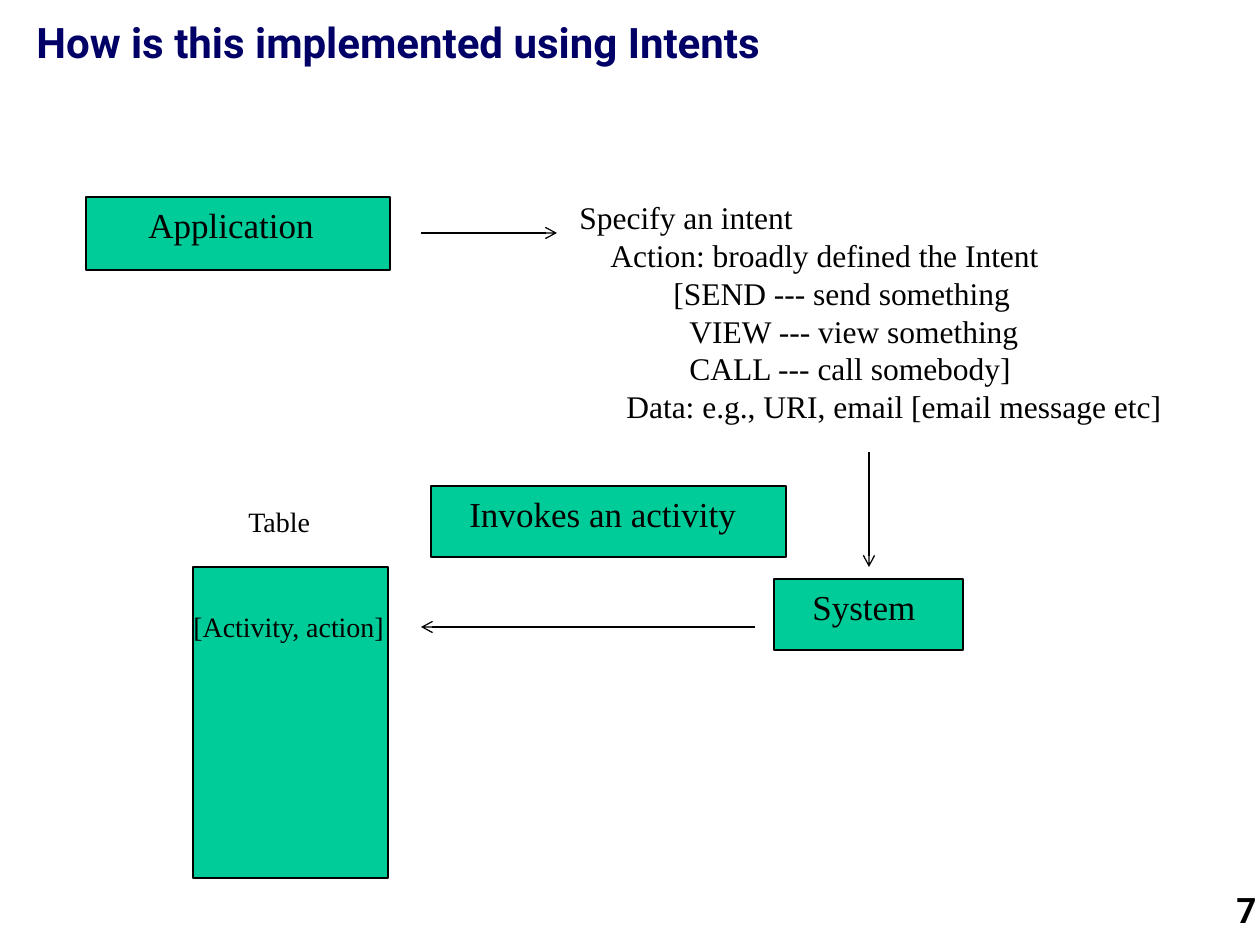
import lxml.etree
import pptx
import pptx.dml.color
import pptx.enum.shapes
import pptx.enum.text
import pptx.oxml.ns
import pptx.util

PX_PER_INCH = 126
NAVY = pptx.dml.color.RGBColor(0x00, 0x00, 0x66)
BLACK = pptx.dml.color.RGBColor(0x00, 0x00, 0x00)
GREEN = pptx.dml.color.RGBColor(0x00, 0xCC, 0x99)
SERIF = "Times New Roman"
SANS = "Roboto"
LEFT = pptx.enum.text.PP_ALIGN.LEFT
RIGHT = pptx.enum.text.PP_ALIGN.RIGHT


def px(length):
    return pptx.util.Emu(round(length * 914400 / PX_PER_INCH))


class SlideBuilder:
    def __init__(self, slide):
        self.shapes = slide.shapes
        self.line_width = pptx.util.Pt(0.75)

    def fill_text(self, frame, lines, size, color=BLACK, font=SERIF, bold=False, align=LEFT):
        font_format = {"size": pptx.util.Pt(size), "name": font, "bold": bold}
        for index, (indent, words) in enumerate(lines):
            paragraph = frame.paragraphs[0] if index == 0 else frame.add_paragraph()
            paragraph.alignment = align
            if indent:
                paragraph._p.get_or_add_pPr().set("marL", str(px(indent)))
            run = paragraph.add_run()
            run.text = words
            run.font.color.rgb = color
            for name, value in font_format.items():
                setattr(run.font, name, value)

    def text(self, box, lines, size, wrap=False, **style):
        frame = self.shapes.add_textbox(*map(px, box)).text_frame
        frame.word_wrap = wrap
        if not wrap:
            frame.auto_size = pptx.enum.text.MSO_AUTO_SIZE.SHAPE_TO_FIT_TEXT
        self.fill_text(frame, lines, size, **style)

    def block(self, box, label=None, indent=0):
        rectangle = self.shapes.add_shape(
            pptx.enum.shapes.MSO_SHAPE.RECTANGLE, *map(px, box))
        rectangle.shadow.inherit = False
        rectangle.fill.solid()
        rectangle.fill.fore_color.rgb = GREEN
        rectangle.line.color.rgb = BLACK
        rectangle.line.width = self.line_width
        if label:
            frame = rectangle.text_frame
            frame.vertical_anchor = pptx.enum.text.MSO_ANCHOR.TOP
            self.fill_text(frame, [(indent, label)], 20)

    def arrow(self, *ends):
        connector = self.shapes.add_connector(
            pptx.enum.shapes.MSO_CONNECTOR.STRAIGHT, *map(px, ends))
        connector.line.color.rgb = BLACK
        connector.line.width = self.line_width
        qn = pptx.oxml.ns.qn
        outline = connector._element.spPr.find(qn("a:ln"))
        lxml.etree.SubElement(outline, qn("a:tailEnd"), type="arrow")
        lxml.etree.SubElement(connector._element.spPr, qn("a:effectLst"))


def main():
    deck = pptx.Presentation()
    deck.slide_width, deck.slide_height = px(1260), px(945)
    builder = SlideBuilder(deck.slides.add_slide(deck.slide_layouts[6]))

    builder.text((869, 882, 400, 63), [(0, "7")], 20, wrap=True,
                 font=SANS, bold=True, align=RIGHT)
    builder.text((24, 10, 1223, 126), [(0, "How is this implemented using Intents")], 24,
                 wrap=True, color=NAVY, font=SANS, bold=True)

    builder.block((86, 197, 304, 73), "Application", 50)
    builder.block((774, 579, 189, 71), "System", 26)

    intent_lines = [
        (0, "Specify an intent"),
        (31, "Action: broadly defined the Intent"),
        (94, "[SEND --- send something"),
        (110, "VIEW --- view something"),
        (110, "CALL --- call somebody]"),
        (47, "Data: e.g., URI, email [email message etc]"),
    ]
    builder.text((567, 192, 622, 242), intent_lines, 18)

    builder.arrow(421, 233, 557, 233)
    builder.arrow(869, 452, 869, 567)
    builder.block((193, 567, 195, 311))
    builder.text((236, 498, 88, 47), [(0, "Table")], 16)
    builder.text((181, 603, 219, 47), [(0, "[Activity, action]")], 16)
    builder.arrow(755, 627, 421, 627)
    builder.block((431, 486, 355, 71), "Invokes an activity", 26)

    deck.save("out.pptx")


if __name__ == "__main__":
    main()
